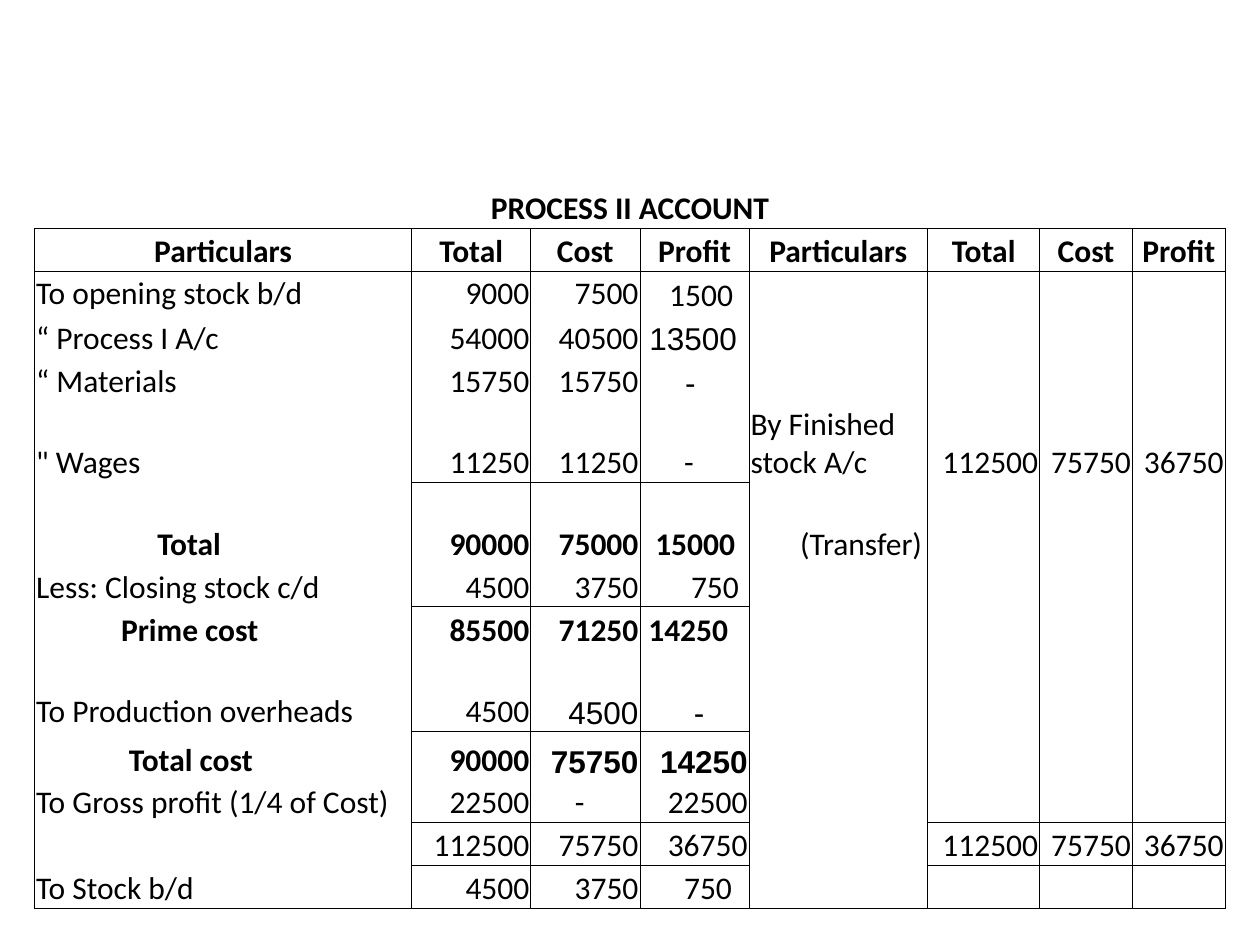
from dataclasses import dataclass

from lxml import etree
from pptx import Presentation
from pptx.dml.color import RGBColor
from pptx.enum.text import MSO_ANCHOR, PP_ALIGN
from pptx.oxml.ns import qn
from pptx.table import Table, _Cell
from pptx.util import Cm, Pt

LEFT, CENTER, RIGHT = PP_ALIGN.LEFT, PP_ALIGN.CENTER, PP_ALIGN.RIGHT
MIDDLE, BOTTOM = MSO_ANCHOR.MIDDLE, MSO_ANCHOR.BOTTOM


@dataclass(frozen=True)
class Theme:
    body_font: str = "Calibri"
    alternate_font: str = "Arial"
    text_size: int = 18
    ink: str = "000000"
    rule_width: float = 0.5
    cell_margin: float = 0.03


@dataclass(frozen=True)
class Entry:
    text: str = ""
    align: PP_ALIGN = LEFT
    bold: bool = False
    indent: float = 0
    font: str = Theme.body_font
    anchor: MSO_ANCHOR = BOTTOM


THEME = Theme()
ARIAL = THEME.alternate_font


def heading(text: str) -> Entry:
    return Entry(text, CENTER, True)


def amount(text: str, bold: bool = False, font: str = THEME.body_font,
           anchor: MSO_ANCHOR = BOTTOM) -> Entry:
    return Entry(text, RIGHT, bold, font=font, anchor=anchor)


def shifted(text: str, indent: float, bold: bool = False,
            font: str = THEME.body_font) -> Entry:
    return Entry(text, LEFT, bold, indent, font)


CREDIT_TOTALS = [amount("112500"), amount("75750"), amount("36750")]
COLUMN_HEADINGS = [heading(t) for t in ("Particulars", "Total", "Cost", "Profit")]

ACCOUNT = [
    [heading("PROCESS II ACCOUNT")],
    COLUMN_HEADINGS * 2,
    [Entry("To opening stock b/d", anchor=MIDDLE), amount("9000", anchor=MIDDLE),
     amount("7500", anchor=MIDDLE), shifted("1500", 0.56)],
    [Entry("“ Process I A/c"), amount("54000"), amount("40500"),
     shifted("13500", 0.16, font=ARIAL)],
    [Entry("“ Materials"), amount("15750"), amount("15750"),
     shifted("-", 0.88, font=ARIAL)],
    [Entry("\" Wages"), amount("11250"), amount("11250"), shifted("-", 0.86),
     Entry("By Finished stock A/c"), *CREDIT_TOTALS],
    [shifted("Total", 2.44, True), amount("90000", True), amount("75000", True),
     shifted("15000", 0.28, True), shifted("(Transfer)", 1)],
    [Entry("Less: Closing stock c/d"), amount("4500"), amount("3750"),
     shifted("750", 1)],
    [shifted("Prime cost", 1.71, True), amount("85500", True),
     amount("71250", True), shifted("14250", 0.14, True)],
    [Entry("To Production overheads"), amount("4500"), amount("4500", font=ARIAL),
     shifted("-", 1.06, font=ARIAL)],
    [shifted("Total cost", 1.87, True), amount("90000", True),
     amount("75750", True, ARIAL), amount("14250", True, ARIAL)],
    [Entry("To Gross profit (1/4 of Cost)"), amount("22500"), shifted("-", 0.86),
     amount("22500")],
    [Entry(), *CREDIT_TOTALS, Entry(), *CREDIT_TOTALS],
    [Entry("To Stock b/d"), amount("4500"), amount("3750"), shifted("750", 0.86)],
]

COLUMN_WIDTHS = [7.6, 2.4, 2.2, 2.2, 3.6, 2.26, 1.87, 1.87]
ROW_HEIGHTS = [0.87] * 5 + [1.64] * 2 + [0.87] * 2 + [1.64, 0.98, 0.85] + [0.87] * 2

ALL_COLUMNS = set(range(len(COLUMN_WIDTHS)))
DEBIT_AMOUNTS = {1, 2, 3}
BOTH_AMOUNTS = DEBIT_AMOUNTS | {5, 6, 7}
RULED_BELOW = {0: ALL_COLUMNS, 1: ALL_COLUMNS, 5: DEBIT_AMOUNTS, 7: DEBIT_AMOUNTS,
               9: DEBIT_AMOUNTS, 11: BOTH_AMOUNTS, 12: BOTH_AMOUNTS, 13: ALL_COLUMNS}


def rule_cell(cell: _Cell, row: int, column: int) -> None:
    sides = {
        "a:lnL": row > 0,
        "a:lnR": row > 0,
        "a:lnT": column in RULED_BELOW.get(row - 1, set()),
        "a:lnB": column in RULED_BELOW.get(row, set()),
    }
    properties = cell._tc.get_or_add_tcPr()
    for position, (side, ruled) in enumerate(sides.items()):
        line = etree.Element(qn(side), w=str(Pt(THEME.rule_width)))
        if ruled:
            paint = etree.SubElement(line, qn("a:solidFill"))
            etree.SubElement(paint, qn("a:srgbClr"), val=THEME.ink)
        else:
            etree.SubElement(line, qn("a:noFill"))
        properties.insert(position, line)


def write_entry(cell: _Cell, entry: Entry) -> None:
    cell.margin_left = cell.margin_right = cell.margin_top = Cm(THEME.cell_margin)
    cell.margin_bottom = 0
    cell.vertical_anchor = entry.anchor
    cell.fill.background()
    cell.text = entry.text
    paragraph = cell.text_frame.paragraphs[0]
    paragraph.alignment = entry.align
    paragraph.font.name = entry.font
    paragraph.font.size = Pt(THEME.text_size)
    paragraph.font.bold = entry.bold
    paragraph.font.color.rgb = RGBColor.from_string(THEME.ink)
    if entry.indent:
        paragraph._p.get_or_add_pPr().set("marL", str(Cm(entry.indent)))


def fill_account(account: Table) -> None:
    account.first_row = account.horz_banding = False
    for column, width in zip(account.columns, COLUMN_WIDTHS):
        column.width = Cm(width)
    for row, height in zip(account.rows, ROW_HEIGHTS):
        row.height = Cm(height)
    account.cell(0, 0).merge(account.cell(0, len(COLUMN_WIDTHS) - 1))
    for row, entries in enumerate(ACCOUNT):
        padded = entries + [Entry()] * (len(COLUMN_WIDTHS) - len(entries))
        for column, entry in enumerate(padded):
            cell = account.cell(row, column)
            write_entry(cell, entry)
            rule_cell(cell, row, column)


def main() -> None:
    presentation = Presentation()
    presentation.slide_width, presentation.slide_height = Cm(25.4), Cm(19.05)
    slide = presentation.slides.add_slide(presentation.slide_layouts[6])
    frame = slide.shapes.add_table(
        len(ROW_HEIGHTS), len(COLUMN_WIDTHS), Cm(0.7), Cm(3.73),
        Cm(sum(COLUMN_WIDTHS)), Cm(sum(ROW_HEIGHTS)))
    fill_account(frame.table)
    presentation.save("out.pptx")


if __name__ == "__main__":
    main()
